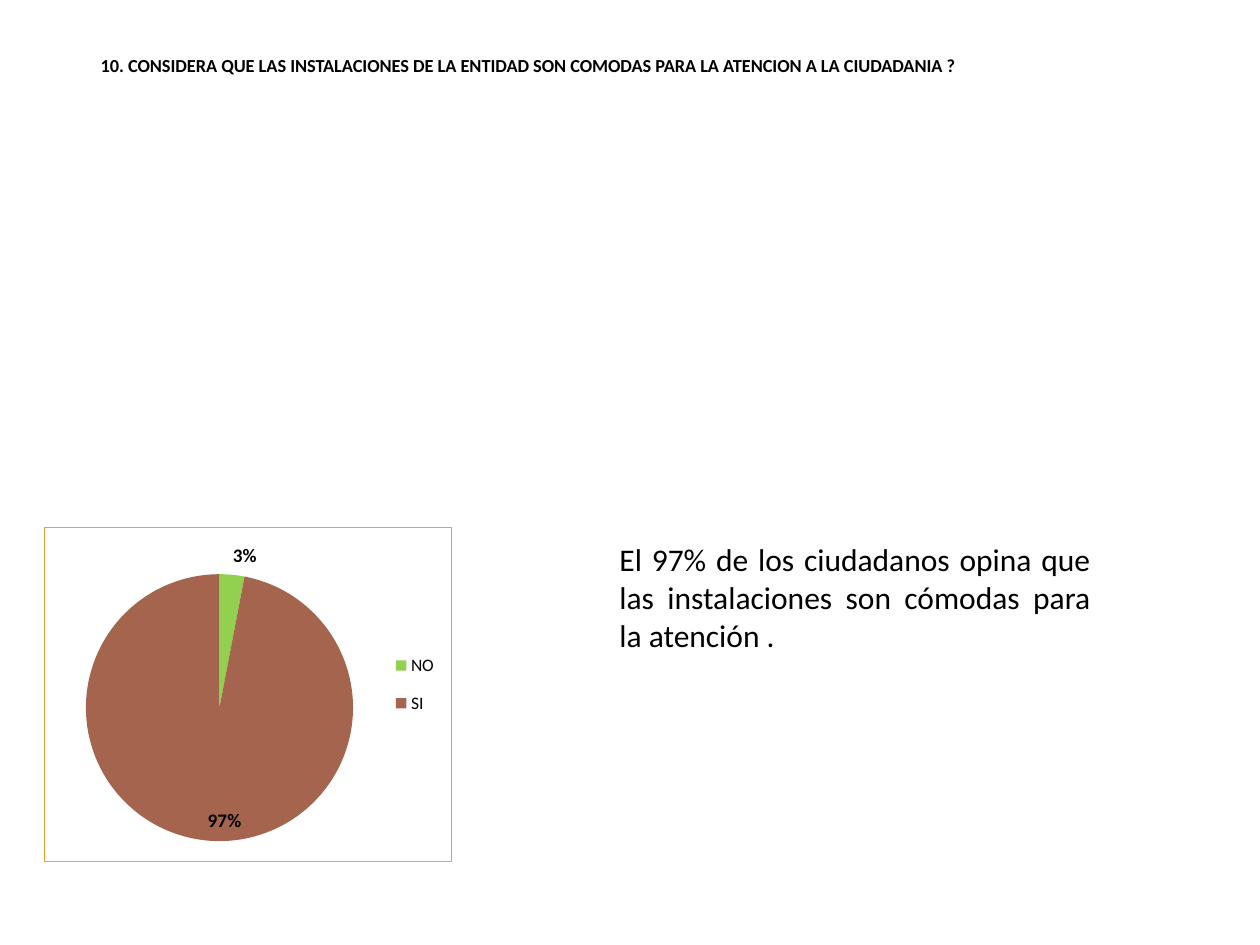
from pptx import Presentation
from pptx.chart.data import CategoryChartData
from pptx.dml.color import RGBColor
from pptx.enum.chart import XL_CHART_TYPE, XL_LABEL_POSITION, XL_LEGEND_POSITION
from pptx.enum.text import MSO_ANCHOR, MSO_AUTO_SIZE, PP_ALIGN
from pptx.oxml import parse_xml
from pptx.oxml.ns import nsdecls
from pptx.util import Pt

# Content
QUESTION = ("10. CONSIDERA QUE LAS INSTALACIONES DE LA ENTIDAD SON COMODAS "
            "PARA LA ATENCION A LA CIUDADANIA ?")
FINDING = ("El 97% de los ciudadanos opina que las instalaciones son cómodas "
           "para la atención .")
ANSWERS = [  # answer, percent, colour, label position
    ("NO", 3, "92D050", XL_LABEL_POSITION.OUTSIDE_END),
    ("SI", 97, "A5644E", XL_LABEL_POSITION.INSIDE_END),
]
THEME = {"font": "Calibri", "text": "000000", "panel": "FFFFFF", "border": "F0A22E",
         "question": 10.5, "finding": 18, "chart": 10, "label": 11}

# Places in px: left, top, width, height
EMU_PER_PX = 914400 // 126
SLIDE = (1260, 945)
QUESTION_BOX = (88, 29, 1085, 76)
CHART_BOX = (44, 527, 408, 335)
PIE_BOX = (84, 574, 269, 269)
LEGEND_BOX = (385, 638, 57, 94)
FINDING_BOX = (607, 534, 496, 165)


def px(lengths):
    return [n * EMU_PER_PX for n in lengths]


def style(font, size, bold=False):
    font.name, font.size, font.bold = THEME["font"], Pt(size), bold
    font.color.rgb = RGBColor.from_string(THEME["text"])


def write(frame, text, align, size, bold=False):
    frame.word_wrap = True
    paragraph = frame.paragraphs[0]
    paragraph.alignment = align
    run = paragraph.add_run()
    run.text = text
    style(run.font, size, bold)
    return paragraph


def inner_layout(box, target=""):
    """Manual layout of a box as fractions of the chart area."""
    left, top, width, height = CHART_BOX
    parts = {"x": (box[0] - left) / width, "y": (box[1] - top) / height,
             "w": box[2] / width, "h": box[3] / height}
    modes = '<c:xMode val="edge"/><c:yMode val="edge"/>'
    values = "".join(f'<c:{key} val="{value:.2f}"/>' for key, value in parts.items())
    return parse_xml(f'<c:layout {nsdecls("c")}><c:manualLayout>{target}{modes}{values}'
                     '</c:manualLayout></c:layout>')


def set_layout(parent, layout, after=None):
    for old in parent.findall(layout.tag):
        parent.remove(old)
    if after is None:
        parent.insert(0, layout)
    else:
        after.addnext(layout)


prs = Presentation()
prs.slide_width, prs.slide_height = px(SLIDE)
slide = prs.slides.add_slide(prs.slide_layouts[5])

# Question
question = slide.shapes.title
question.left, question.top, question.width, question.height = px(QUESTION_BOX)
question.text_frame.vertical_anchor = MSO_ANCHOR.MIDDLE
write(question.text_frame, QUESTION, PP_ALIGN.LEFT, THEME["question"], True).line_spacing = 0.9

# Pie of the answers
data = CategoryChartData()
data.categories = [answer[0] for answer in ANSWERS]
data.add_series("Series 1", [answer[1] for answer in ANSWERS])
chart = slide.shapes.add_chart(XL_CHART_TYPE.PIE, *px(CHART_BOX), data).chart
chart.has_title = False
style(chart.font, THEME["chart"])
chart.has_legend = True
chart.legend.position = XL_LEGEND_POSITION.RIGHT
chart.legend.include_in_layout = False

pie = chart.plots[0]
pie.vary_by_categories = True
series = pie.series[0]
labels = series.data_labels
labels.show_percentage, labels.show_value = True, False
labels.number_format, labels.number_format_is_linked = "0%", False
style(labels.font, THEME["label"], True)
for index, (_, _, colour, position) in enumerate(ANSWERS):
    point = series.points[index]
    point.format.fill.solid()
    point.format.fill.fore_color.rgb = RGBColor.from_string(colour)
    style(point.data_label.font, THEME["label"], True)
    point.data_label.position = position
for label in chart.element.iter("{*}dLbl"):
    label.find("{*}showVal").set("val", "0")
    label.find("{*}showPercent").set("val", "1")

# Pie and legend places, panel fill and border
plot_area = chart.element.find(".//{*}plotArea")
set_layout(plot_area, inner_layout(PIE_BOX, '<c:layoutTarget val="inner"/>'))
legend = chart.element.find(".//{*}legend")
set_layout(legend, inner_layout(LEGEND_BOX), legend.find("{*}legendPos"))
chart.element.find("{*}chart").addnext(parse_xml(
    f'<c:spPr {nsdecls("c", "a")}>'
    f'<a:solidFill><a:srgbClr val="{THEME["panel"]}"/></a:solidFill>'
    f'<a:ln w="{Pt(0.75)}"><a:solidFill><a:srgbClr val="{THEME["border"]}"/></a:solidFill></a:ln>'
    '</c:spPr>'))

# Finding
finding = slide.shapes.add_textbox(*px(FINDING_BOX)).text_frame
write(finding, FINDING, PP_ALIGN.JUSTIFY, THEME["finding"])
finding.auto_size = MSO_AUTO_SIZE.SHAPE_TO_FIT_TEXT

prs.save("out.pptx")
